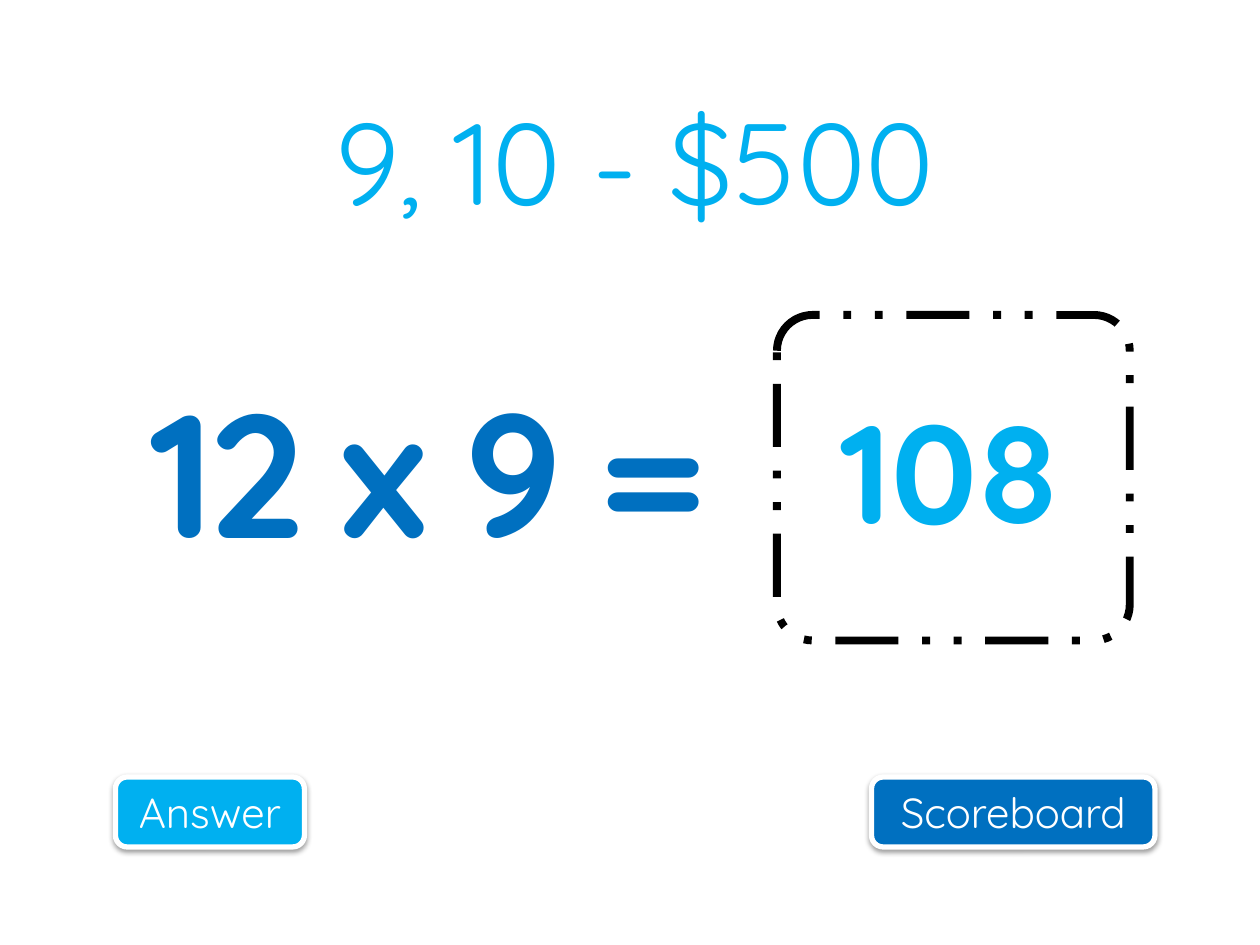
from dataclasses import dataclass

from lxml.etree import SubElement
from pptx import Presentation
from pptx.dml.color import RGBColor
from pptx.enum.dml import MSO_LINE
from pptx.enum.shapes import MSO_SHAPE
from pptx.enum.text import MSO_ANCHOR, MSO_AUTO_SIZE, PP_ALIGN
from pptx.oxml.ns import qn
from pptx.util import Pt

# Content
TITLE = "9, 10 - $500"
QUESTION = " 12 x 9 ="
ANSWER = "108"

# Places: left, top, width, height in points
TITLE_BOX = (66, 48, 594, 72)
QUESTION_BOX = (54, 204, 570, 168)
ANSWER_FRAME = (444, 180, 201.6, 186)
ANSWER_BOX = (462, 216, 162, 168)
BUTTON_TOP, BUTTON_HEIGHT = 444, 40


@dataclass(frozen=True)
class Theme:
    font: str = "Quicksand"
    light: str = "00B0F0"
    dark: str = "0070C0"
    white: str = "FFFFFF"
    black: str = "000000"
    title_size: int = 66
    question_size: int = 100
    answer_size: int = 80
    button_size: int = 24


theme = Theme()

# Buttons: label, left, width, colour
BUTTONS = [
    ("Answer", 66, 108, theme.light),
    ("Scoreboard", 498, 162, theme.dark),
]


def place(box):
    return [Pt(length) for length in box]


def write(shape, text, size, color, bold=False, align=PP_ALIGN.CENTER,
          anchor=MSO_ANCHOR.TOP):
    frame = shape.text_frame
    frame.word_wrap = True
    frame.auto_size = MSO_AUTO_SIZE.NONE
    frame.vertical_anchor = anchor
    paragraph = frame.paragraphs[0]
    paragraph.alignment = align
    run = paragraph.add_run()
    run.text = text
    run.font.name = theme.font
    run.font.size = Pt(size)
    run.font.bold = bold
    run.font.color.rgb = RGBColor.from_string(color)
    return run


def add_rounded(slide, box, fill, line, line_width):
    shape = slide.shapes.add_shape(MSO_SHAPE.ROUNDED_RECTANGLE, *place(box))
    shape.shadow.inherit = False
    shape.fill.solid()
    shape.fill.fore_color.rgb = RGBColor.from_string(fill)
    shape.line.color.rgb = RGBColor.from_string(line)
    shape.line.width = Pt(line_width)
    return shape


def add_drop_shadow(shape):
    effects = shape.element.spPr.find(qn("a:effectLst"))
    shadow = SubElement(effects, qn("a:outerShdw"), blurRad=str(Pt(3.1)),
                        dist=str(Pt(1.6)), dir="5400000", rotWithShape="0")
    color = SubElement(shadow, qn("a:srgbClr"), val=theme.black)
    SubElement(color, qn("a:alpha"), val="38000")


presentation = Presentation()
presentation.slide_width, presentation.slide_height = Pt(720), Pt(540)
slide = presentation.slides.add_slide(presentation.slide_layouts[5])

# Buttons
for label, left, width, color in BUTTONS:
    button = add_rounded(slide, (left, BUTTON_TOP, width, BUTTON_HEIGHT),
                         color, theme.white, 3)
    add_drop_shadow(button)
    write(button, label, theme.button_size, theme.white,
          anchor=MSO_ANCHOR.MIDDLE)

# Title
title = slide.shapes.title
title.left, title.top, title.width, title.height = place(TITLE_BOX)
write(title, TITLE, theme.title_size, theme.light)

# Question, with tightened letters
question = slide.shapes.add_textbox(*place(QUESTION_BOX))
run = write(question, QUESTION, theme.question_size, theme.dark, bold=True,
            align=PP_ALIGN.LEFT)
run.font._element.set("spc", "-300")

# Answer in its dashed frame
frame = add_rounded(slide, ANSWER_FRAME, theme.white, theme.black, 4.5)
frame.adjustments[0] = 0.11
frame.line.dash_style = MSO_LINE.DASH_DOT_DOT
answer = slide.shapes.add_textbox(*place(ANSWER_BOX))
write(answer, ANSWER, theme.answer_size, theme.light, bold=True)

presentation.save("out.pptx")
